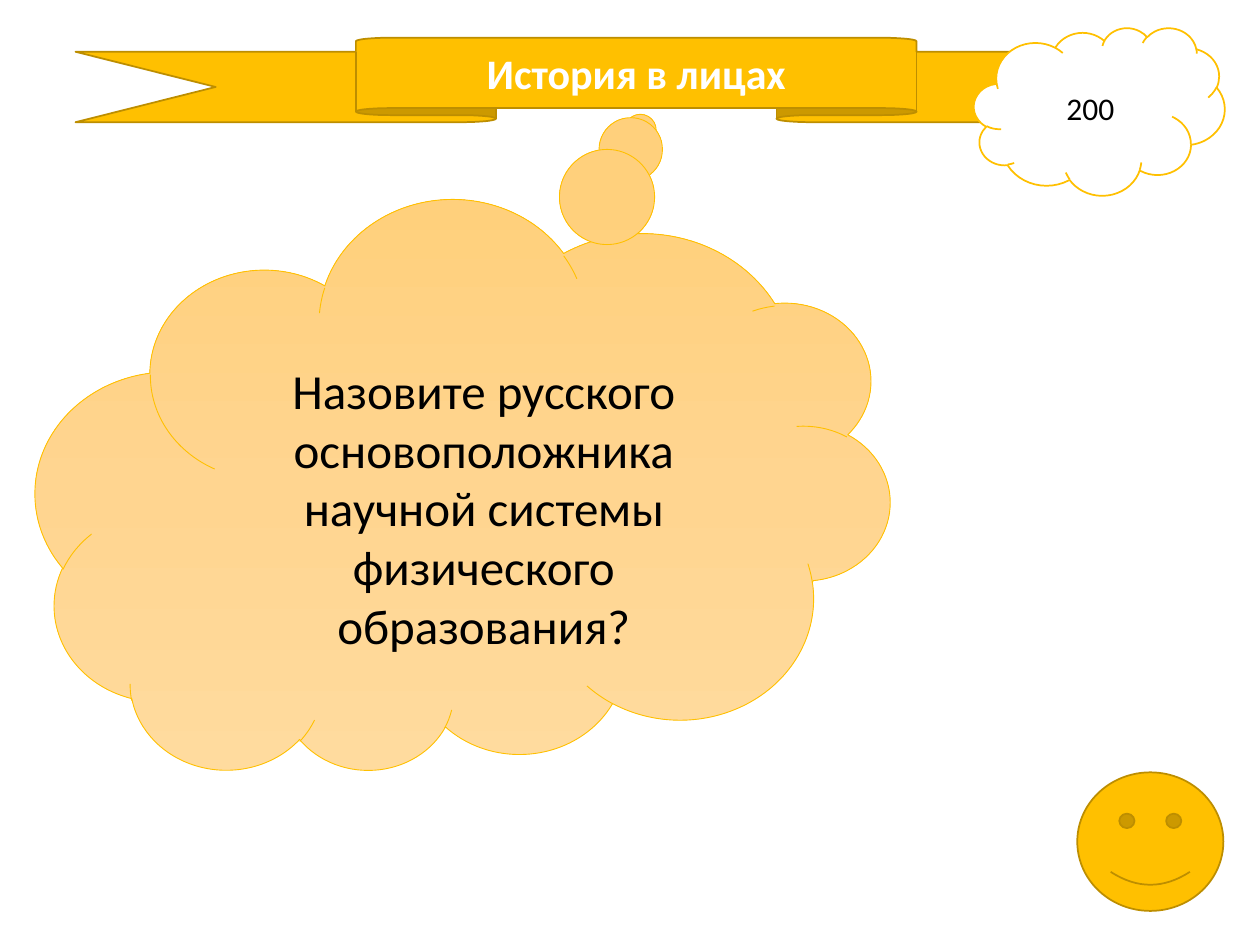
from copy import deepcopy

from pptx import Presentation
from pptx.dml.color import RGBColor
from pptx.enum.shapes import MSO_SHAPE as Shape
from pptx.enum.text import MSO_ANCHOR as Anchor, PP_ALIGN as Align
from pptx.oxml.ns import qn
from pptx.util import Inches, Pt

COLORS = {
    "gold": "FFC000",
    "edge": "BD8E00",
    "white": "FFFFFF",
    "black": "000000",
    "low": "FFDB9E",
    "mid": "FFD590",
    "high": "FFD07C",
}


def color(name):
    return RGBColor.from_string(COLORS[name])


def write(shape, text, size, ink, bold=False):
    frame = shape.text_frame
    frame.word_wrap = True
    frame.text = text
    para = frame.paragraphs[0]
    para.alignment = Align.CENTER
    font = para.runs[0].font
    font.name, font.size, font.bold = "Calibri", Pt(size), bold
    font.color.rgb = color(ink)


def draw(slide, kind, box, fill, line, width=1):
    shape = slide.shapes.add_shape(kind, *map(Inches, box))
    shape.shadow.inherit = False
    if fill:
        shape.fill.solid()
        shape.fill.fore_color.rgb = color(fill)
    shape.line.color.rgb = color(line)
    shape.line.width = Pt(width)
    return shape


def shade(shape, names):
    """Fill from top to bottom with evenly spaced stops."""
    fill = shape.fill
    fill.gradient()
    fill.gradient_angle = 270
    stops = shape._element.spPr.find(".//" + qn("a:gsLst"))
    stops.insert(1, deepcopy(stops[0]))
    for i, (stop, name) in enumerate(zip(fill.gradient_stops, names)):
        stop.position = i / (len(names) - 1)
        stop.color.rgb = color(name)


def banner(slide, box, title):
    ribbon = draw(slide, Shape.UP_RIBBON, box, "gold", "edge")
    ribbon.text_frame.vertical_anchor = Anchor.MIDDLE
    write(ribbon, title, 24, "white", True)


def score(slide, box, points):
    cloud = draw(slide, Shape.CLOUD, box, "white", "gold")
    cloud.text_frame.vertical_anchor = Anchor.MIDDLE
    write(cloud, points, 18, "black")


def bubble(slide, box):
    # Both flips put the tail at the top right
    cloud = draw(slide, Shape.CLOUD_CALLOUT, box, None, "gold", 0.5)
    shade(cloud, ["low", "mid", "high"])
    xfrm = cloud._element.spPr.find(qn("a:xfrm"))
    xfrm.set("flipH", "1")
    xfrm.set("flipV", "1")


def question(slide, box, text):
    left, top, width, height = box
    label = slide.shapes.add_textbox(*map(Inches, box))
    frame = label.text_frame
    frame.margin_left = frame.margin_right = Inches(0.15)
    write(label, text, 28, "black")


def smiley(slide, box):
    draw(slide, Shape.SMILEY_FACE, box, "gold", "edge")


def main():
    deck = Presentation()
    deck.slide_width, deck.slide_height = Inches(10), Inches(7.5)
    slide = deck.slides.add_slide(deck.slide_layouts[6])

    # Heading and score
    banner(slide, (0.6, 0.3, 8.9, 0.67), "История в лицах")
    score(slide, (7.73, 0.22, 1.99, 1.33), "200")

    # Question over its cloud, with the face in the corner
    bubble(slide, (0.28, 1.6, 6.78, 4.53))
    smiley(slide, (8.55, 6.13, 1.16, 1.1))
    question(slide, (1.51, 2.81, 4.66, 1.99),
             "Назовите русского основоположника научной системы "
             "физического образования?")

    deck.save("out.pptx")


if __name__ == "__main__":
    main()
